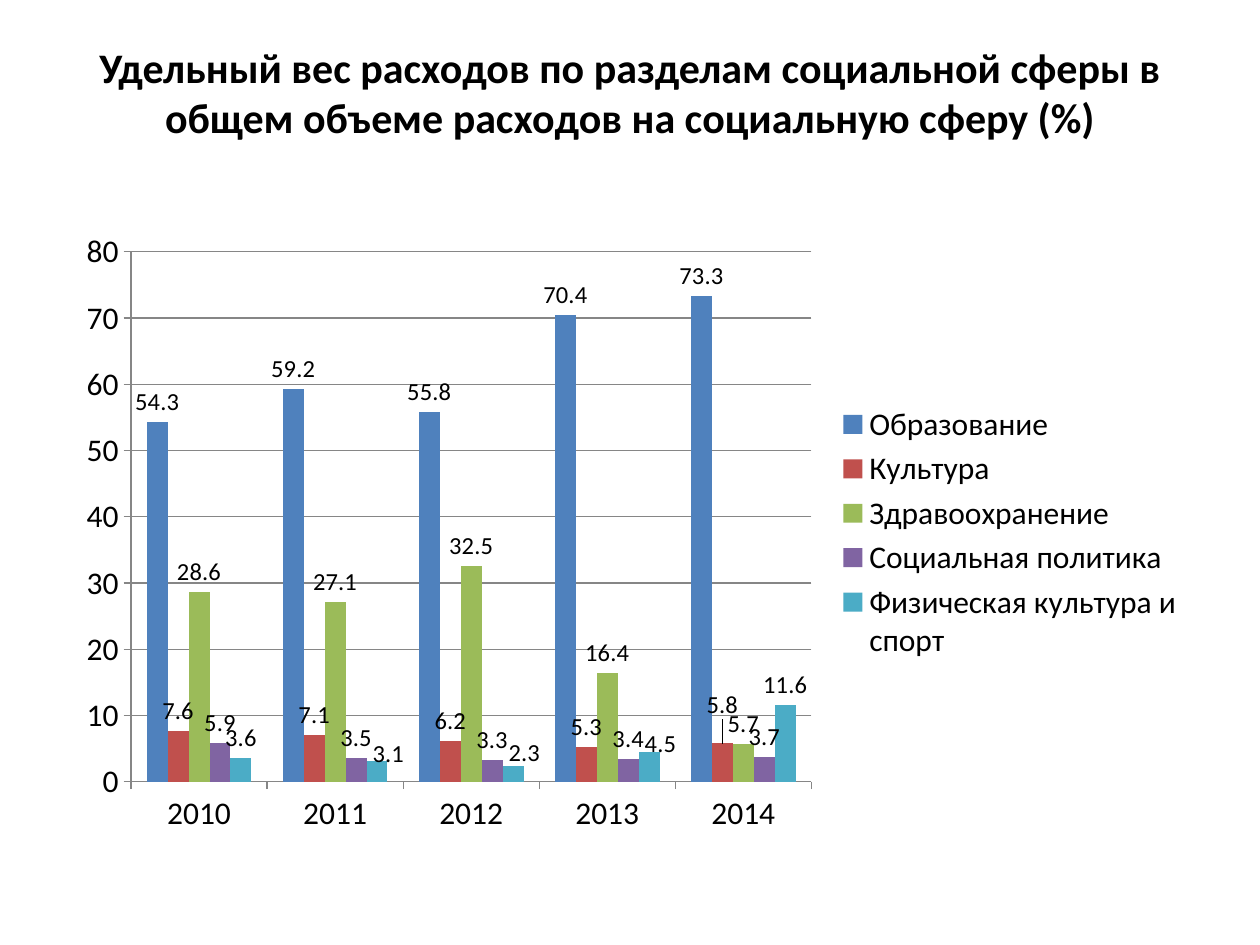
from lxml.etree import SubElement
from pptx import Presentation
from pptx.chart.data import CategoryChartData
from pptx.dml.color import RGBColor
from pptx.enum.chart import XL_CHART_TYPE, XL_LABEL_POSITION, XL_LEGEND_POSITION, XL_TICK_MARK
from pptx.enum.text import MSO_ANCHOR, PP_ALIGN
from pptx.oxml import parse_xml
from pptx.oxml.ns import nsdecls, qn
from pptx.util import Pt

BLACK = RGBColor(0x00, 0x00, 0x00)
GRAY = RGBColor(0x86, 0x86, 0x86)
BLUE = RGBColor(0x4F, 0x81, 0xBD)
RED = RGBColor(0xC0, 0x50, 0x4D)
GREEN = RGBColor(0x9B, 0xBB, 0x59)
PURPLE = RGBColor(0x80, 0x64, 0xA2)
TEAL = RGBColor(0x4B, 0xAC, 0xC6)
FONT = "Calibri"


def style(font, size):
    font.name = FONT
    font.size = Pt(size)
    font.color.rgb = BLACK


def layout(**parts):
    node = parse_xml(f"<c:layout {nsdecls('c')}/>")
    manual = SubElement(node, qn("c:manualLayout"))
    for tag, val in parts.items():
        SubElement(manual, qn(f"c:{tag}")).set("val", str(val))
    return node


deck = Presentation()
deck.slide_width = Pt(720)
deck.slide_height = Pt(540)
slide = deck.slides.add_slide(deck.slide_layouts[6])

title = slide.shapes.add_textbox(Pt(36), Pt(21.6), Pt(648), Pt(90))
frame = title.text_frame
frame.word_wrap = True
frame.vertical_anchor = MSO_ANCHOR.MIDDLE
frame.margin_bottom = Pt(32)
para = frame.paragraphs[0]
para.alignment = PP_ALIGN.CENTER
run = para.add_run()
run.text = "Удельный вес расходов по разделам социальной сферы в общем объеме расходов на социальную сферу (%)"
style(run.font, 24)
run.font.bold = True

rows = [
    ("Образование", BLUE, (54.3, 59.2, 55.8, 70.4, 73.3)),
    ("Культура", RED, (7.6, 7.1, 6.2, 5.3, 5.8)),
    ("Здравоохранение", GREEN, (28.6, 27.1, 32.5, 16.4, 5.7)),
    ("Социальная политика", PURPLE, (5.9, 3.5, 3.3, 3.4, 3.7)),
    ("Физическая культура и спорт", TEAL, (3.6, 3.1, 2.3, 4.5, 11.6)),
]
data = CategoryChartData()
data.categories = ["2010", "2011", "2012", "2013", "2014"]
for name, color, vals in rows:
    data.add_series(name, vals)

chart = slide.shapes.add_chart(
    XL_CHART_TYPE.COLUMN_CLUSTERED, Pt(36), Pt(126), Pt(648), Pt(356.4), data
).chart
style(chart.font, 18)
chart.has_title = False
chart.has_legend = True
chart.legend.position = XL_LEGEND_POSITION.RIGHT
chart.legend.include_in_layout = False

for axis in (chart.category_axis, chart.value_axis):
    axis.major_tick_mark = XL_TICK_MARK.OUTSIDE
    axis.format.line.color.rgb = GRAY
    axis.format.line.width = Pt(0.75)
axis = chart.value_axis
axis.minimum_scale = 0
axis.maximum_scale = 80
axis.major_unit = 10
axis.has_major_gridlines = True
axis.major_gridlines.format.line.color.rgb = GRAY
axis.major_gridlines.format.line.width = Pt(0.75)

plot = chart.plots[0]
plot.gap_width = 150
plot.overlap = 0
plot.vary_by_categories = False
for bars, (name, color, vals) in zip(plot.series, rows):
    bars.format.fill.solid()
    bars.format.fill.fore_color.rgb = color
    bars.invert_if_negative = False
    tags = bars.data_labels
    tags.show_value = True
    tags.position = XL_LABEL_POSITION.OUTSIDE_END
    style(tags.font, 14)

moves = [(1, 4, 0, -0.03), (4, 1, 0.01, 0.02), (4, 2, 0.01, 0.01), (4, 3, 0.01, 0.02)]
for row, col, dx, dy in moves:
    tag = plot.series[row].points[col].data_label
    tag.position = XL_LABEL_POSITION.OUTSIDE_END
    style(tag.font, 14)
    node = chart.element.xpath(f".//c:ser[{row + 1}]//c:dLbl[c:idx/@val='{col}']")[0]
    for old in node.findall(qn("c:layout")):
        node.remove(old)
    node.insert(1, layout(x=dx, y=dy))

area = chart.element.xpath(".//c:plotArea")[0]
for old in area.findall(qn("c:layout")):
    area.remove(old)
area.insert(0, layout(layoutTarget="inner", xMode="edge", yMode="edge", x=0.06, y=0.05, w=0.6, h=0.85))

deck.save("out.pptx")
